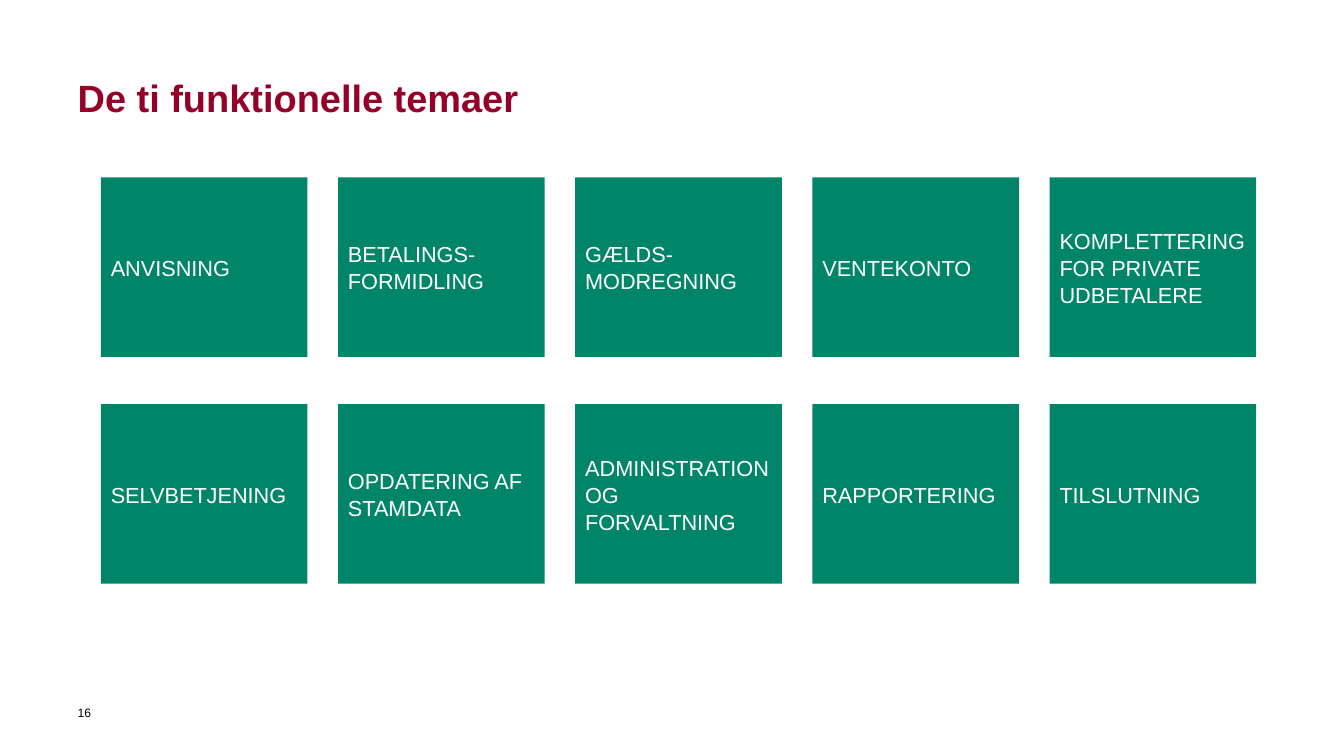
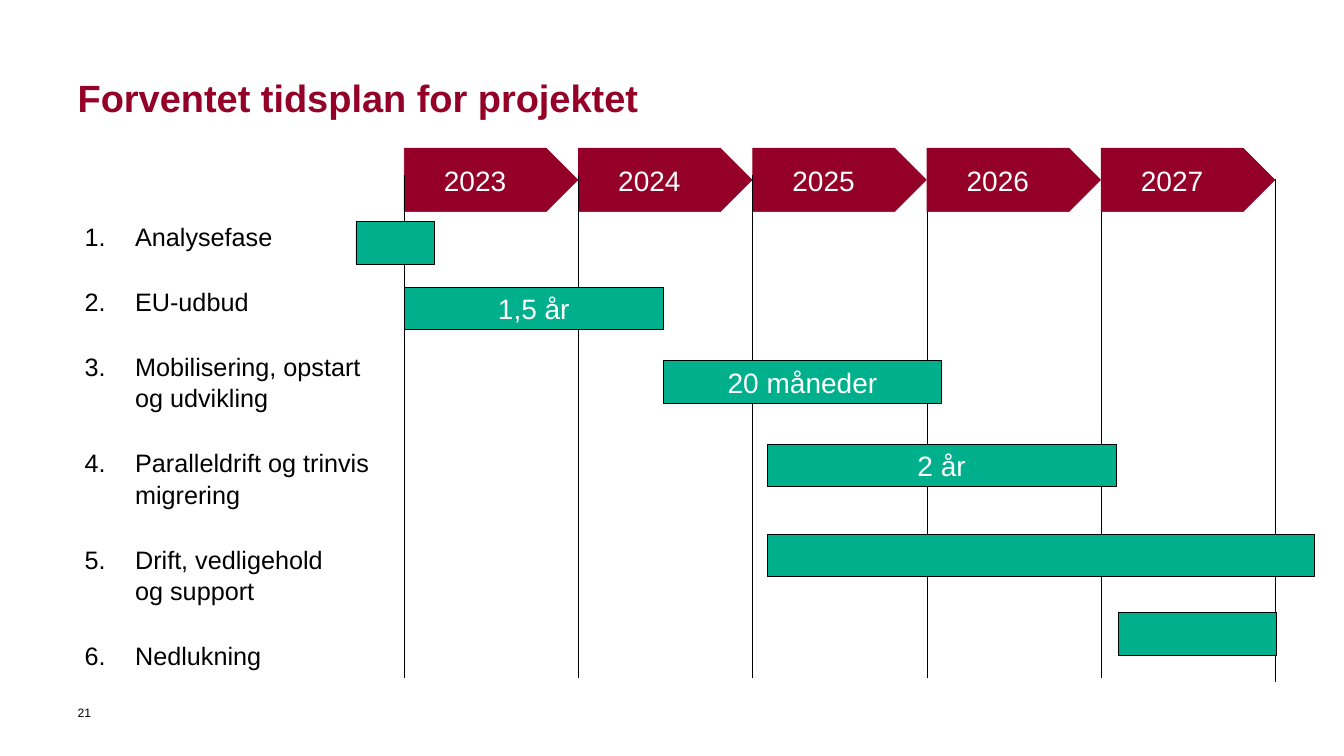
from lxml import etree
from pptx import Presentation
from pptx.dml.color import RGBColor
from pptx.enum import shapes, text
from pptx.oxml import ns
from pptx.util import Inches, Pt

# Shared look
FONT = "Arial"
RED = RGBColor(0x94, 0x00, 0x27)
GREEN = RGBColor(0x00, 0x85, 0x69)
MINT = RGBColor(0x00, 0xB0, 0x8C)
BLACK = RGBColor(0, 0, 0)
WHITE = RGBColor(255, 255, 255)
KIND = shapes.MSO_SHAPE
ALIGN = text.PP_ALIGN
ANCHOR = text.MSO_ANCHOR

# Content
THEMES = [
    ["ANVISNING", "BETALINGS-FORMIDLING", "GÆLDS-MODREGNING", "VENTEKONTO",
     "KOMPLETTERING FOR PRIVATE UDBETALERE"],
    ["SELVBETJENING", "OPDATERING AF STAMDATA",
     "ADMINISTRATION OG FORVALTNING", "RAPPORTERING", "TILSLUTNING"],
]
PHASES = [
    "Analysefase",
    "EU-udbud",
    "Mobilisering, opstart\vog udvikling",
    "Paralleldrift og trinvis\vmigrering",
    "Drift, vedligehold\vog support",
    "Nedlukning",
]
YEARS = ["2023", "2024", "2025", "2026", "2027"]
# Left, top, width and label of each bar
BARS = [
    (3.53, 2.2, 0.78, ""),
    (4.01, 2.85, 2.57, "1,5 år"),
    (6.58, 3.58, 2.76, "20 måneder"),
    (7.61, 4.41, 3.46, "2 år"),
    (7.61, 5.3, 5.43, ""),
    (11.09, 6.08, 1.57, ""),
]


def place(shape, *box):
    shape.left, shape.top, shape.width, shape.height = map(Inches, box)


def write(shape, lines, size, color=BLACK, bold=False, align=ALIGN.LEFT,
          anchor=ANCHOR.TOP, inset=(0, 0, 0, 0), spacing=1.0, gap=0,
          number=False):
    frame = shape.text_frame
    frame.word_wrap = True
    frame.auto_size = text.MSO_AUTO_SIZE.NONE
    frame.vertical_anchor = anchor
    (frame.margin_left, frame.margin_top,
     frame.margin_right, frame.margin_bottom) = map(Inches, inset)
    for i, line in enumerate(lines):
        para = frame.add_paragraph() if i else frame.paragraphs[0]
        para.text = line
        para.alignment = align
        para.line_spacing = spacing
        para.space_before = Pt(gap if i else 0)
        if number:
            props = para._p.get_or_add_pPr()
            props.set("marL", str(Inches(0.5)))
            props.set("indent", str(-Inches(0.5)))
            etree.SubElement(props, ns.qn("a:buFont"), typeface=FONT)
            etree.SubElement(props, ns.qn("a:buAutoNum"), type="arabicPeriod")
        for run in para.runs:
            font = run.font
            font.name, font.size, font.bold = FONT, Pt(size), bold
            font.color.rgb = color


def start(deck, layout, title, number):
    slide = deck.slides.add_slide(deck.slide_layouts[layout])
    head = slide.shapes.title
    place(head, 0.77, 0.4, 11.8, 1.02)
    write(head, [title], 27.1, RED, bold=True, spacing=0.9,
          inset=(0, 0.39, 1.13, 0))
    foot = slide.shapes.add_textbox(0, 0, 0, 0)
    place(foot, 0.77, 7, 0.31, 0.3)
    write(foot, [number], 8.7)
    return slide


def block(slide, kind, box, fill, label="", line=None, **style):
    shape = slide.shapes.add_shape(kind, *map(Inches, box))
    shape.shadow.inherit = False
    shape.fill.solid()
    shape.fill.fore_color.rgb = fill
    if line is None:
        shape.line.fill.background()
    else:
        shape.line.color.rgb = line
        shape.line.width = Pt(0.5)
    if label:
        write(shape, [label], color=WHITE, anchor=ANCHOR.MIDDLE,
              inset=(0.1, 0.05, 0.1, 0.05), **style)
    return shape


def rule(slide, x, top, end):
    line = slide.shapes.add_connector(
        shapes.MSO_CONNECTOR.STRAIGHT, *map(Inches, (x, top, x, end)))
    line.line.color.rgb = BLACK
    line.line.width = Pt(0.5)
    etree.SubElement(line._element.spPr, ns.qn("a:effectLst"))


def themes(deck):
    slide = start(deck, 5, "De ti funktionelle temaer", "16")
    left, right, wide, high = 1, 12.46, 2.05, 1.78
    step = (right - left - wide) / (len(THEMES[0]) - 1)
    for r, row in enumerate(THEMES):
        for c, name in enumerate(row):
            box = (left + c * step, 1.76 + r * 2.25, wide, high)
            block(slide, KIND.RECTANGLE, box, GREEN, name, size=15.5,
                  spacing=1.04)


def plan(deck):
    slide = start(deck, 1, "Forventet tidsplan for projektet", "21")

    # Numbered phases
    body = slide.placeholders[1]
    place(body, 0.84, 2.18, 2.92, 4.41)
    write(body, PHASES, 18, spacing=1.04, gap=24, number=True)

    # Year arrows, with some of the year lines behind and some in front
    left, right = 4.01, 12.65
    step = (right - left) / len(YEARS)
    edges = [left + i * step for i in range(len(YEARS) + 1)]
    for x in edges[3:5]:
        rule(slide, x, 1.74, 6.73)
    for x, year in zip(edges, YEARS):
        arrow = block(slide, KIND.RIGHT_ARROW, (x, 1.47, 1.72, 0.63), RED,
                      year, RED, size=20, align=ALIGN.CENTER)
        arrow.adjustments[0], arrow.adjustments[1] = 1, 0.5
    for x in edges[:3]:
        rule(slide, x, 1.74, 6.73)
    rule(slide, right, 1.78, 6.77)

    # Phase bars
    for x, y, wide, label in BARS:
        block(slide, KIND.RECTANGLE, (x, y, wide, 0.42), MINT, label, BLACK,
              size=20, align=ALIGN.CENTER)


def main():
    deck = Presentation()
    deck.slide_width, deck.slide_height = Inches(13.33), Inches(7.5)
    themes(deck)
    plan(deck)
    deck.save("out.pptx")


if __name__ == "__main__":
    main()
